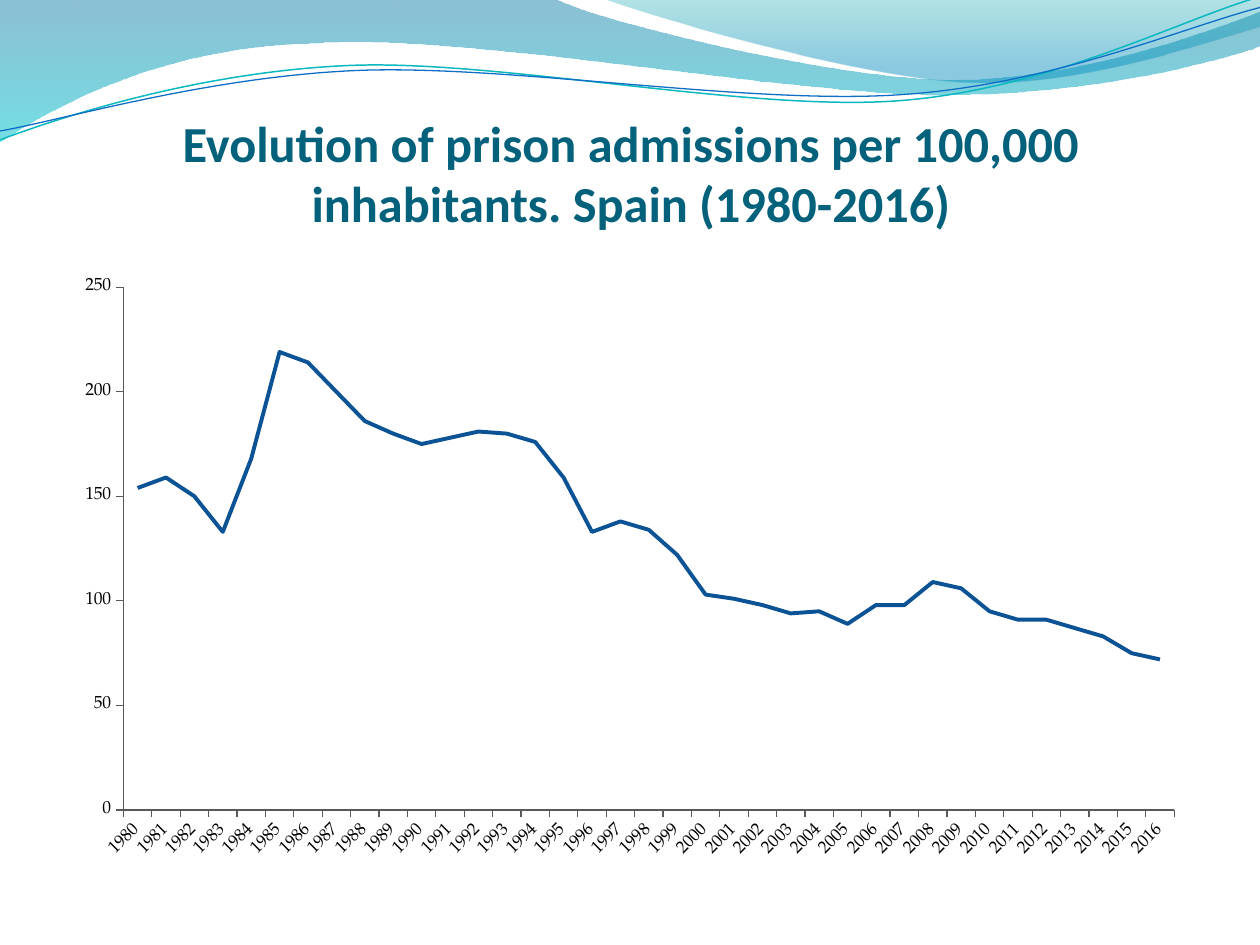
from dataclasses import dataclass
from math import cos, radians, sin

from lxml.etree import SubElement
from pptx import Presentation
from pptx.chart.data import CategoryChartData
from pptx.dml.color import RGBColor
from pptx.enum.chart import XL_CHART_TYPE, XL_MARKER_STYLE, XL_TICK_MARK
from pptx.enum.text import MSO_ANCHOR, MSO_AUTO_SIZE, PP_ALIGN
from pptx.oxml import parse_xml
from pptx.oxml.ns import nsdecls, qn
from pptx.util import Inches, Pt


@dataclass(frozen=True)
class Theme:
    title_font: str = "Calibri"
    title_size: float = 28.8
    title_color: str = "04617B"
    chart_font: str = "TeX Gyre Pagella"
    chart_size: float = 10
    chart_color: str = "000000"
    axis: str = "595959"
    series: str = "0B5394"
    teal_line: str = "0AB8BF"
    blue_line: str = "0F6FC6"
    wide_wave: tuple = ((0, "0074A1", 45), (1, "00C6CF", 55))
    right_wave: tuple = ((0, "00A1A9", 30), (0.8, "008BBF", 45))


def rgb(value):
    return RGBColor.from_string(value)


def turn(point, center, degrees):
    a = radians(degrees)
    dx, dy = point[0] - center[0], point[1] - center[1]
    return center[0] + dx * cos(a) - dy * sin(a), center[1] + dx * sin(a) + dy * cos(a)


class SlideBuilder:
    """Draws styled elements on the current slide."""

    def __init__(self, slide, theme):
        self.s = slide
        self.theme = theme

    def outline(self, segments, closed):
        anchors = [(Inches(x), Inches(y)) for x, y in (seg[-1] for seg in segments)]
        fb = self.s.shapes.build_freeform(*anchors[0])
        fb.add_line_segments(anchors[1:], close=closed)
        sp = fb.convert_to_shape()
        sp.shadow.inherit = False
        for step, seg in zip(list(sp._element.iter(qn("a:lnTo"))), segments[1:]):
            if len(seg) == 3:
                step.tag = qn("a:cubicBezTo")
                for i, (x, y) in enumerate(seg[:2]):
                    pt = SubElement(step, qn("a:pt"), x=str(Inches(x) - sp.left), y=str(Inches(y) - sp.top))
                    step.insert(i, pt)
        return sp

    def wave(self, segments, stops):
        sp = self.outline(segments, True)
        sp.line.fill.background()
        sp.fill.gradient()
        sp.fill.gradient_angle = 270
        for stop, (position, color, _) in zip(sp.fill.gradient_stops, stops):
            stop.position = position
            stop.color.rgb = rgb(color)
        for clr, (_, _, opacity) in zip(sp._element.spPr.iter(qn("a:srgbClr")), stops):
            SubElement(clr, qn("a:alpha"), val=str(opacity * 1000))

    def curve(self, segments, center, color, width, tilt=-2.7):
        level = [[turn(point, center, -tilt) for point in seg] for seg in segments]
        sp = self.outline(level, False)
        sp.rotation = tilt
        sp.fill.background()
        sp.line.color.rgb = rgb(color)
        sp.line.width = Pt(width)

    def title(self, text, left, top, width, height):
        sp = self.s.shapes.title
        self.s.shapes._spTree.append(sp._element)
        sp.left, sp.top, sp.width, sp.height = map(Inches, (left, top, width, height))
        tf = sp.text_frame
        tf.word_wrap = True
        tf.auto_size = MSO_AUTO_SIZE.NONE
        tf.vertical_anchor = MSO_ANCHOR.BOTTOM
        tf.margin_left = tf.margin_right = tf.margin_bottom = 0
        tf.margin_top = Inches(0.05)
        p = tf.paragraphs[0]
        p.alignment = PP_ALIGN.CENTER
        r = p.add_run()
        r.text = text
        r.font.name = self.theme.title_font
        r.font.size = Pt(self.theme.title_size)
        r.font.bold = True
        r.font.color.rgb = rgb(self.theme.title_color)

    def line_chart(self, name, categories, values, box, plot_box):
        data = CategoryChartData()
        data.categories = categories
        data.add_series(name, values)
        frame = self.s.shapes.add_chart(XL_CHART_TYPE.LINE_STACKED, *map(Inches, box), data)
        chart = frame.chart
        chart.has_legend = chart.has_title = False
        chart.font.name = self.theme.chart_font
        chart.font.size = Pt(self.theme.chart_size)
        chart.font.color.rgb = rgb(self.theme.chart_color)
        for axis in (chart.category_axis, chart.value_axis):
            axis.has_major_gridlines = False
            axis.major_tick_mark = XL_TICK_MARK.OUTSIDE
            axis.minor_tick_mark = XL_TICK_MARK.NONE
            axis.format.line.color.rgb = rgb(self.theme.axis)
            axis.format.line.width = Pt(0.75)
        chart.category_axis.tick_labels.font.size = Pt(self.theme.chart_size)
        chart.category_axis._element.find(qn("c:txPr")).find(qn("a:bodyPr")).set("rot", "-2700000")
        axis = chart.value_axis
        axis.minimum_scale, axis.maximum_scale, axis.major_unit = 0, 250, 50
        axis.tick_labels.number_format = "0"
        axis.tick_labels.number_format_is_linked = False
        plot = chart.plots[0]
        plot.vary_by_categories = False
        series = plot.series[0]
        series.smooth = False
        series.marker.style = XL_MARKER_STYLE.NONE
        series.format.line.color.rgb = rgb(self.theme.series)
        series.format.line.width = Pt(2.25)
        self.place_plot(chart, box, plot_box)

    def place_plot(self, chart, box, plot_box):
        left, top, width, height = box
        x, y, w, h = plot_box
        shares = ((x - left) / width, (y - top) / height, w / width, h / height)
        area = chart._chartSpace.chart.plotArea
        for old in area.findall(qn("c:layout")):
            area.remove(old)
        sizes = "".join(f'<c:{tag} val="{val:.4f}"/>' for tag, val in zip("xywh", shares))
        area.insert(0, parse_xml(
            f'<c:layout {nsdecls("c")}><c:manualLayout><c:layoutTarget val="inner"/>'
            f'<c:xMode val="edge"/><c:yMode val="edge"/>{sizes}</c:manualLayout></c:layout>'))


WIDE_WAVE = (
    ((0, 0),), ((4.4, -0.01),),
    ((4.76, 0.17), (6.64, 0.63), (7.58, 0.63)), ((8.53, 0.63), (9.58, 0.26), (10, 0.09)),
    ((10.01, 0.36),),
    ((9.83, 0.44), (8.7, 0.76), (7.46, 0.75)), ((6.22, 0.75), (3.82, 0.28), (2.57, 0.34)),
    ((1.29, 0.36), (0.46, 0.83), (-0.01, 1.13)))
RIGHT_WAVE = (
    ((4.79, -0.01),),
    ((5.09, 0.11), (6.82, 0.62), (7.69, 0.65)), ((8.56, 0.69), (9.61, 0.32), (10, 0.21)),
    ((10, 0),))
TEAL_CURVE = (
    ((0, 1.11),),
    ((0.48, 0.93), (1.58, 0.57), (2.77, 0.52)), ((3.95, 0.47), (5.93, 0.89), (7.13, 0.8)),
    ((8.33, 0.71), (9.38, 0.15), (9.98, -0.02)))
BLUE_CURVE = (
    ((0, 1.04),),
    ((0.47, 0.96), (1.64, 0.61), (2.83, 0.56)), ((4.03, 0.51), (5.97, 0.84), (7.17, 0.75)),
    ((8.36, 0.67), (9.41, 0.21), (10, 0.06)))
YEARS = [str(year) for year in range(1980, 2017)]
ADMISSIONS = [
    154, 159, 150, 133, 168, 219, 214, 200, 186, 180, 175, 178, 181,
    180, 176, 159, 133, 138, 134, 122, 103, 101, 98, 94, 95, 89,
    98, 98, 109, 106, 95, 91, 91, 87, 83, 75, 72]


def main():
    prs = Presentation()
    prs.slide_width, prs.slide_height = Inches(10), Inches(7.5)
    theme = Theme()
    b = SlideBuilder(prs.slides.add_slide(prs.slide_layouts[5]), theme)
    b.wave(WIDE_WAVE, theme.wide_wave)
    b.wave(RIGHT_WAVE, theme.right_wave)
    b.curve(TEAL_CURVE, (4.99, 0.58), theme.teal_line, 0.85)
    b.curve(BLUE_CURVE, (5, 0.59), theme.blue_line, 0.75)
    b.title("Evolution of prison admissions per 100,000 inhabitants. Spain (1980-2016)",
            0.51, 0.92, 9, 0.93)
    b.line_chart("Series 1", YEARS, ADMISSIONS, (0.5, 2.12, 9, 4.8), (0.98, 2.28, 8.34, 4.15))
    prs.save("out.pptx")


if __name__ == "__main__":
    main()
